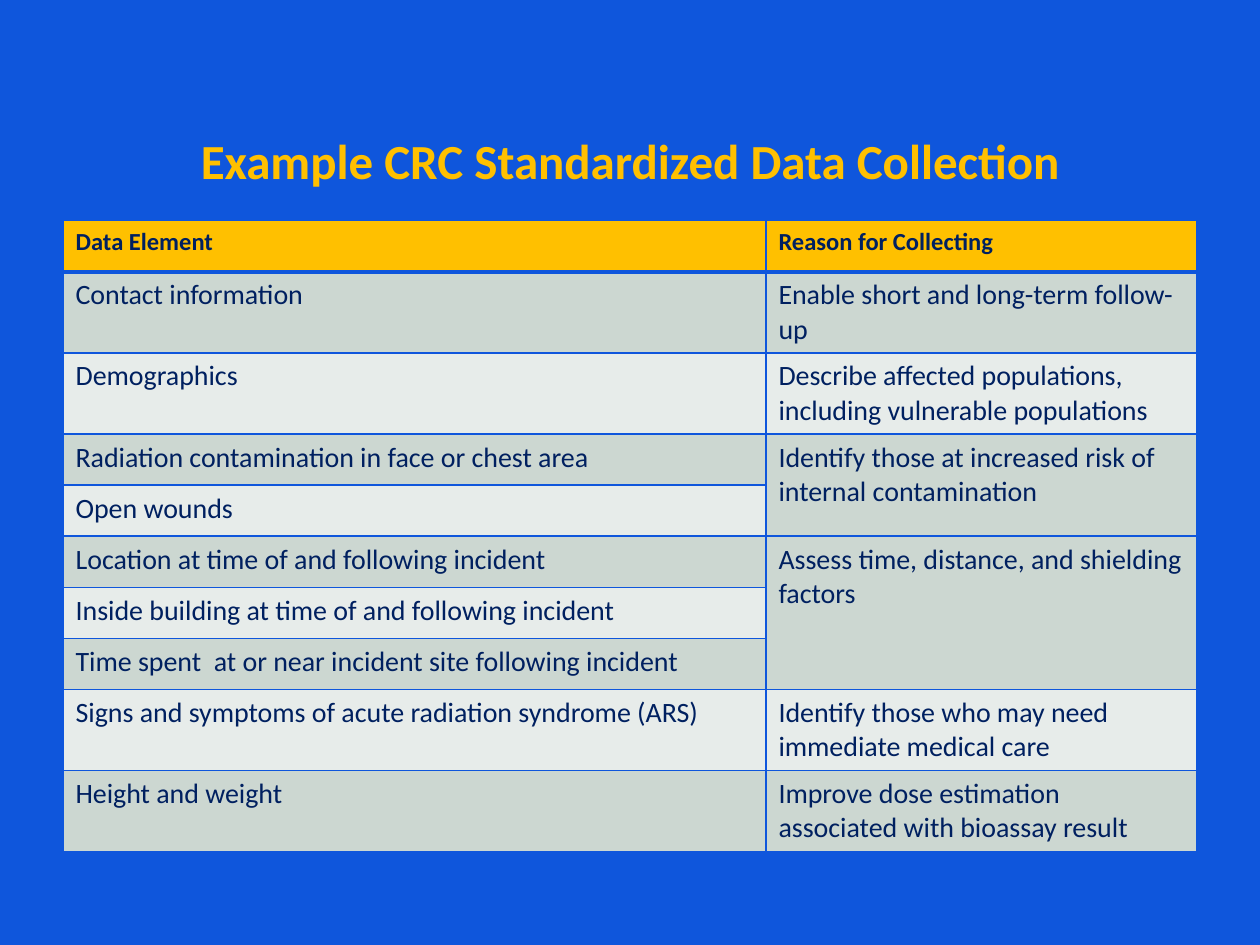
from lxml import etree
from pptx import Presentation
from pptx.dml.color import RGBColor
from pptx.enum.text import MSO_ANCHOR, PP_ALIGN
from pptx.oxml.ns import qn
from pptx.util import Cm, Pt

BOTTOM = MSO_ANCHOR.BOTTOM
CENTER = PP_ALIGN.CENTER
TITLE_ONLY = 5
FONT = "Calibri"
BLUE, GOLD, NAVY = "0F56DC", "FFC000", "002060"
BANDS = ("E7ECEA", "CCD7D1")
COLUMN_WIDTHS = (14.17, 8.69)
ROW_HEIGHT = 1.03

HEADERS = ("Data Element", "Reason for Collecting")
GROUPS = [
    (["Contact information"], "Enable short and long-term follow-up"),
    (["Demographics"], "Describe affected populations, including vulnerable populations"),
    (["Radiation contamination in face or chest area", "Open wounds"],
     "Identify those at increased risk of internal contamination"),
    (["Location at time of and following incident",
      "Inside building at time of and following incident",
      "Time spent  at or near incident site following incident"],
     "Assess time, distance, and shielding factors"),
    (["Signs and symptoms of acute radiation syndrome (ARS)"],
     "Identify those who may need immediate medical care"),
    (["Height and weight"], "Improve dose estimation associated with bioassay result"),
]


def color(value):
    return RGBColor.from_string(value)


def fill_solid(fill, value):
    fill.solid()
    fill.fore_color.rgb = color(value)


def format_text(text_frame, size, value, bold):
    for paragraph in text_frame.paragraphs:
        for run in paragraph.runs:
            run.font.name = FONT
            run.font.size = Pt(size)
            run.font.bold = bold
            run.font.color.rgb = color(value)


def set_borders(cell, top, bottom):
    properties = cell._tc.get_or_add_tcPr()
    widths = {"a:lnL": 1, "a:lnR": 1, "a:lnT": top, "a:lnB": bottom}
    for position, (tag, width) in enumerate(widths.items()):
        line = etree.Element(qn(tag), w=str(Pt(width)))
        solid = etree.SubElement(line, qn("a:solidFill"))
        etree.SubElement(solid, qn("a:srgbClr"), val=BLUE)
        properties.insert(position, line)


def add_title(slide, text):
    title = slide.shapes.title
    title.left, title.top, title.width, title.height = Cm(1.27), Cm(0.76), Cm(22.86), Cm(3.18)
    text_frame = title.text_frame
    text_frame.text = text
    text_frame.vertical_anchor = BOTTOM
    paragraph = text_frame.paragraphs[0]
    paragraph.alignment = CENTER
    paragraph.line_spacing = Pt(30)
    format_text(text_frame, 28, GOLD, True)


def fill_groups(table):
    row = 1
    for elements, reason in GROUPS:
        last_row = row + len(elements) - 1
        table.cell(row, 1).text = reason
        if last_row > row:
            table.cell(row, 1).merge(table.cell(last_row, 1))
        for offset, element in enumerate(elements):
            table.cell(row + offset, 0).text = element
        row = last_row + 1


def format_cells(table):
    for row_index, row in enumerate(table.rows):
        row.height = Cm(ROW_HEIGHT)
        is_header = row_index == 0
        for cell in row.cells:
            fill_solid(cell.fill, GOLD if is_header else BANDS[row_index % 2])
            set_borders(cell, 3 if row_index == 1 else 1, 3 if is_header else 1)
            format_text(cell.text_frame, 14 if is_header else 16, NAVY, is_header)


def add_data_table(slide):
    row_count = 1 + sum(len(elements) for elements, reason in GROUPS)
    shape = slide.shapes.add_table(row_count, len(HEADERS), Cm(1.27), Cm(4.45),
                                   Cm(sum(COLUMN_WIDTHS)), Cm(ROW_HEIGHT * row_count))
    table = shape.table
    for index, (header, width) in enumerate(zip(HEADERS, COLUMN_WIDTHS)):
        table.columns[index].width = Cm(width)
        table.cell(0, index).text = header
    fill_groups(table)
    format_cells(table)
    shape.height = Cm(12.62)


def main():
    presentation = Presentation()
    presentation.slide_width, presentation.slide_height = Cm(25.4), Cm(19.05)
    slide = presentation.slides.add_slide(presentation.slide_layouts[TITLE_ONLY])
    fill_solid(slide.background.fill, BLUE)
    add_title(slide, "Example CRC Standardized Data Collection")
    add_data_table(slide)
    presentation.save("out.pptx")


if __name__ == "__main__":
    main()
